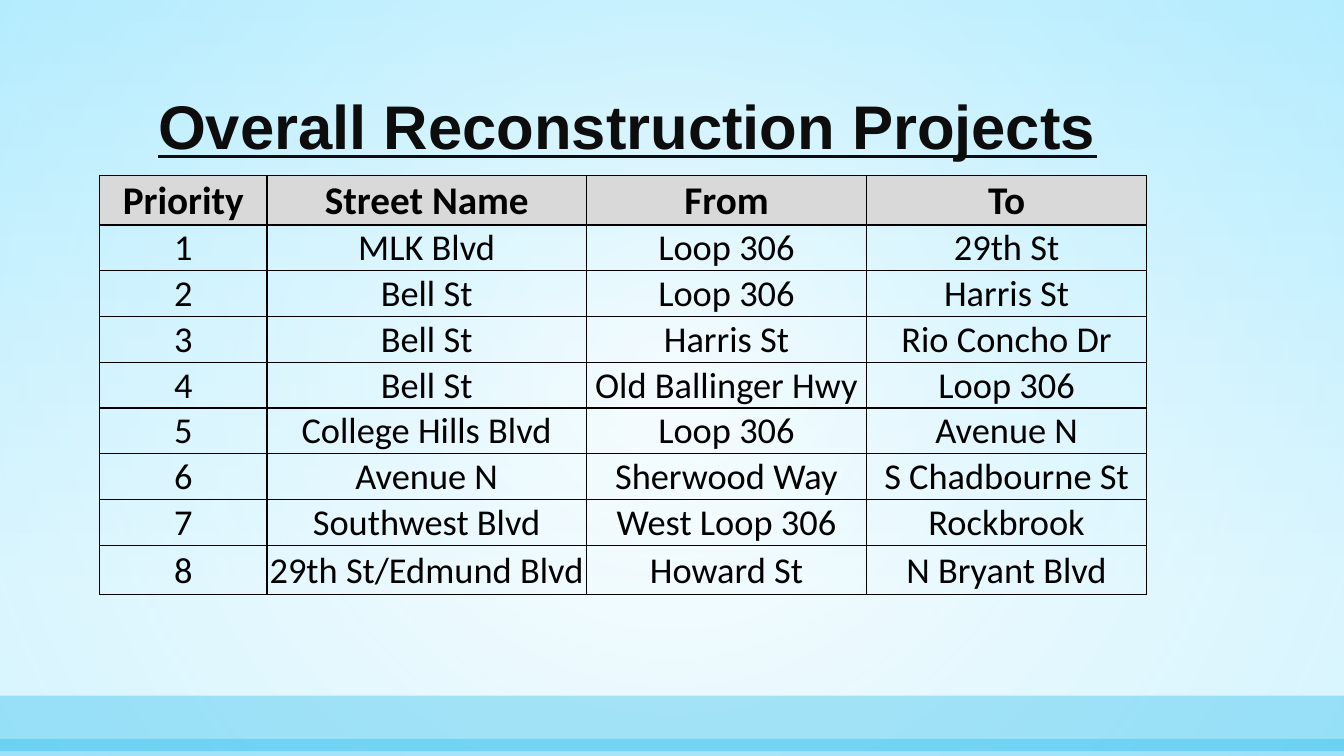
from pptx import Presentation
from pptx.dml.color import RGBColor
from pptx.enum.shapes import MSO_SHAPE as Shape
from pptx.enum.text import MSO_ANCHOR as Anchor, MSO_AUTO_SIZE as AutoSize, PP_ALIGN as Align
from pptx.oxml import parse_xml
from pptx.oxml.ns import nsdecls, qn
from pptx.util import Cm, Pt


def set_color(color_format, color, alpha=None):
    """Apply a hex color, with an optional opacity in percent."""
    color_format.rgb = RGBColor.from_string(color)
    if alpha is not None:
        for element in color_format._xFill.iter(qn("a:srgbClr")):
            element.append(parse_xml(f'<a:alpha {nsdecls("a")} val="{alpha * 1000}"/>'))


def set_gradient(fill, stops):
    """Fill with (position, color, opacity) stops."""
    fill.gradient()
    for stop, (position, color, alpha) in zip(fill.gradient_stops, stops):
        stop.position = position
        stop.color.rgb = RGBColor.from_string(color)
        if alpha is not None:
            stop._gs.find(qn("a:srgbClr")).append(
                parse_xml(f'<a:alpha {nsdecls("a")} val="{alpha * 1000}"/>'))


presentation = Presentation()
presentation.slide_width = Cm(33.87)
presentation.slide_height = Cm(19.05)
slide = presentation.slides.add_slide(presentation.slide_layouts[5])

# Background: a vertical gradient under a radial glow and two bottom bands
background = slide.background.fill
set_gradient(background, [(0, "C8F1FF", None), (0.79, "FFFFFF", None)])
background.gradient_angle = 270

decorations = []
for top, height in [(0, 19.05), (17.53, 1.4), (18.62, 0.43)]:
    shape = slide.shapes.add_shape(
        Shape.RECTANGLE, 0, Cm(top), presentation.slide_width, Cm(height))
    shape.shadow.inherit = False
    shape.line.fill.background()
    decorations.append(shape)

glow, *bands = decorations
set_gradient(glow.fill, [(0, "FFFFFF", 49), (1, "91E4FF", 35)])
linear = next(glow.element.iter(qn("a:lin")))
linear.getparent().replace(linear, parse_xml(
    f'<a:path {nsdecls("a")} path="circle">'
    '<a:fillToRect l="50000" t="50000" r="50000" b="50000"/></a:path>'))
for band, alpha in zip(bands, (30, 28)):
    band.fill.solid()
    set_color(band.fill.fore_color, "00B0EA")
    next(band.element.spPr.iter(qn("a:srgbClr"))).append(
        parse_xml(f'<a:alpha {nsdecls("a")} val="{alpha * 1000}"/>'))

# Title, brought in front of the decorations
title = slide.shapes.title
title.element.getparent().append(title.element)
title_box = {"left": 3.73, "top": 1.22, "width": 26.42, "height": 3.02}
for name, value in title_box.items():
    setattr(title, name, Cm(value))
title_frame = title.text_frame
title_frame.text = "Overall Reconstruction Projects"
title_frame.auto_size = AutoSize.NONE
title_frame.vertical_anchor = Anchor.BOTTOM
paragraph = title_frame.paragraphs[0]
paragraph.alignment = Align.LEFT
paragraph.line_spacing = 0.9
title_font = {"name": "Arial", "size": Pt(44), "bold": True, "underline": True}
for name, value in title_font.items():
    setattr(paragraph.runs[0].font, name, value)
set_color(paragraph.runs[0].font.color, "0D0D0D")

# Project table
projects = [
    ("Priority", "Street Name", "From", "To"),
    ("1", "MLK Blvd", "Loop 306", "29th St"),
    ("2", "Bell St", "Loop 306", "Harris St"),
    ("3", "Bell St", "Harris St", "Rio Concho Dr"),
    ("4", "Bell St", "Old Ballinger Hwy", "Loop 306"),
    ("5", "College Hills Blvd", "Loop 306", "Avenue N"),
    ("6", "Avenue N", "Sherwood Way", "S Chadbourne St"),
    ("7", "Southwest Blvd", "West Loop 306", "Rockbrook"),
    ("8", "29th St/Edmund Blvd", "Howard St", "N Bryant Blvd"),
]
column_widths = [4.22, 8.05, 7.06, 7.06]
row_heights = [1.23] + [1.15] * 7 + [1.25]
cell_format = {
    "vertical_anchor": Anchor.MIDDLE, "margin_left": Cm(0.03),
    "margin_right": Cm(0.03), "margin_top": Cm(0.03), "margin_bottom": 0,
}
table = slide.shapes.add_table(
    len(projects), len(column_widths), Cm(2.51), Cm(4.43),
    Cm(sum(column_widths)), Cm(sum(row_heights))).table
for column, width in zip(table.columns, column_widths):
    column.width = Cm(width)

for row_index, (row, height, texts) in enumerate(zip(table.rows, row_heights, projects)):
    row.height = Cm(height)
    is_header = row_index == 0
    cell_font = {"name": "Calibri", "size": Pt(28 if is_header else 26), "bold": is_header}
    for cell, text in zip(row.cells, texts):
        cell.text = text
        for name, value in cell_format.items():
            setattr(cell, name, value)
        properties = cell._tc.get_or_add_tcPr()
        for side in ("lnL", "lnR", "lnT", "lnB"):
            properties.append(parse_xml(
                f'<a:{side} {nsdecls("a")} w="{Pt(1)}"><a:solidFill>'
                f'<a:srgbClr val="000000"/></a:solidFill></a:{side}>'))
        if is_header:
            cell.fill.solid()
            set_color(cell.fill.fore_color, "D9D9D9")
        else:
            cell.fill.background()
        paragraph = cell.text_frame.paragraphs[0]
        paragraph.alignment = Align.CENTER
        font = paragraph.runs[0].font
        for name, value in cell_font.items():
            setattr(font, name, value)
        set_color(font.color, "000000")

presentation.save("out.pptx")
